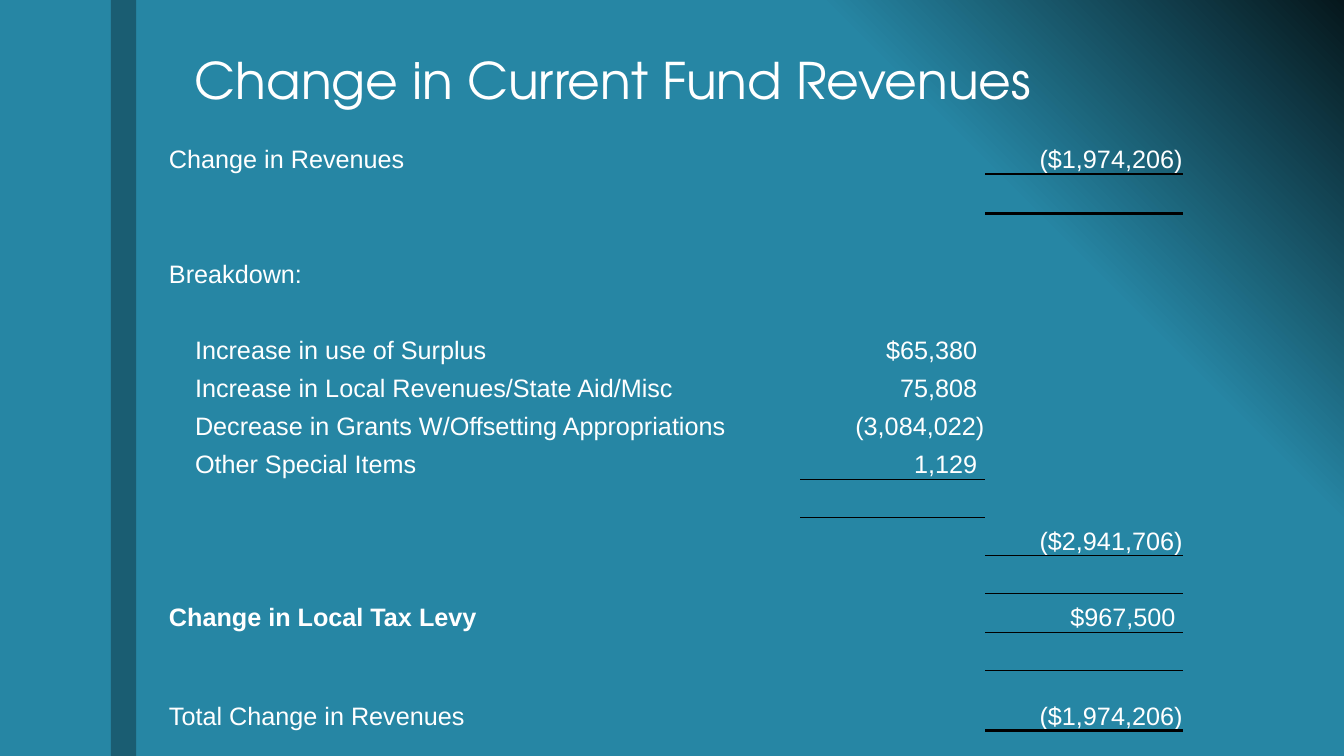
from copy import deepcopy
from dataclasses import dataclass

from lxml.etree import SubElement
from pptx import Presentation
from pptx.dml.color import RGBColor
from pptx.enum.shapes import MSO_SHAPE
from pptx.enum.text import MSO_ANCHOR, MSO_AUTO_SIZE, PP_ALIGN
from pptx.oxml import parse_xml
from pptx.oxml.ns import nsdecls, qn
from pptx.util import Inches, Pt


@dataclass(frozen=True)
class Theme:
    background: tuple = ((0, "06171C"), (0.25, "2686A4"), (0.87, "2686A4"))
    band: str = "134251"
    band_opacity: int = 60
    text: str = "FFFFFF"
    rule: str = "000000"
    title_font: str = "TeX Gyre Adventor"
    body_font: str = "Arial"
    title_size: int = 36
    body_size: int = 18
    thin: float = 0.5
    thick: float = 2


THEME = Theme()
GRID_COLUMNS, GRID_ROWS = 160, 90
TITLE = "Change in Current Fund Revenues"
COLUMN_WIDTHS = [3.1, 3.5, 37.5, 31.2, 22, 23.6]
ROW_HEIGHTS = [4.7, 4.7, 4.45, 4.55, 4.45] + [4.55] * 9 + [7.2]
DETAIL, TOTAL = 4, 5

LABELS = [
    (0, 0, 2, "Change in Revenues", False),
    (3, 0, 2, "Breakdown:", False),
    (5, 1, 2, "Increase in use of Surplus", False),
    (6, 1, 3, "Increase in Local Revenues/State Aid/Misc", False),
    (7, 1, 3, "Decrease in Grants W/Offsetting Appropriations", False),
    (8, 1, 2, "Other Special Items", False),
    (12, 0, 2, "Change in Local Tax Levy", True),
    (14, 0, 2, "Total Change in Revenues", False),
]
AMOUNTS = [
    (0, TOTAL, "($1,974,206)", THEME.thick),
    (5, DETAIL, "$65,380", None),
    (6, DETAIL, "75,808", None),
    (7, DETAIL, "(3,084,022)", None),
    (8, DETAIL, "1,129", THEME.thin),
    (10, TOTAL, "($2,941,706)", THEME.thin),
    (12, TOTAL, "$967,500", THEME.thin),
    (14, TOTAL, "($1,974,206)", THEME.thick),
]


def apply(target, values):
    for name, value in values.items():
        setattr(target, name, value)


class SlideBuilder:
    def __init__(self, presentation, theme):
        self.theme = theme
        self.column = presentation.slide_width / GRID_COLUMNS
        self.row = presentation.slide_height / GRID_ROWS
        self.slide = presentation.slides.add_slide(presentation.slide_layouts[5])

    def box(self, left, top, width, height):
        return {
            "left": round(left * self.column),
            "top": round(top * self.row),
            "width": round(width * self.column),
            "height": round(height * self.row),
        }

    def style(self, paragraph, text, font, size, bold=False):
        run = paragraph.add_run()
        run.text = text
        apply(run.font, {"name": font, "size": Pt(size), "bold": bold})
        run.font.color.rgb = RGBColor.from_string(self.theme.text)

    def background(self):
        fill = self.slide.background.fill
        fill.gradient()
        fill.gradient_angle = 225
        stop_list = self.slide.background._cSld.find(".//" + qn("a:gsLst"))
        stop_list.append(deepcopy(stop_list[-1]))
        for stop, (position, color) in zip(fill.gradient_stops, self.theme.background):
            stop.position = position
            stop.color.rgb = RGBColor.from_string(color)

    def band(self, *place):
        shape = self.slide.shapes.add_shape(
            MSO_SHAPE.RECTANGLE, *self.box(*place).values()
        )
        shape.shadow.inherit = False
        shape.line.fill.background()
        shape.fill.solid()
        shape.fill.fore_color.rgb = RGBColor.from_string(self.theme.band)
        color = shape._element.spPr.find(".//" + qn("a:srgbClr"))
        SubElement(color, qn("a:alpha"), val=str(self.theme.band_opacity * 1000))

    def title(self, text, *place):
        title = self.slide.shapes.title
        apply(title, self.box(*place))
        apply(title.text_frame, {
            "vertical_anchor": MSO_ANCHOR.BOTTOM,
            "word_wrap": True,
            "auto_size": MSO_AUTO_SIZE.NONE,
        })
        paragraph = title.text_frame.paragraphs[0]
        apply(paragraph, {"alignment": PP_ALIGN.LEFT, "line_spacing": 0.9})
        self.style(paragraph, text, self.theme.title_font, self.theme.title_size)

    def table(self, left, top, widths, heights):
        place = self.box(left, top, sum(widths), sum(heights))
        frame = self.slide.shapes.add_table(len(heights), len(widths), *place.values())
        table = frame.table
        apply(table, {"first_row": False, "horz_banding": False})
        style_id = table._tbl.tblPr.find(qn("a:tableStyleId"))
        style_id.text = "{2D5ABB26-0587-4C30-8999-92F81FD0307C}"
        for column, width in zip(table.columns, widths):
            column.width = round(width * self.column)
        for row, height in zip(table.rows, heights):
            row.height = round(height * self.row)
        for cell in table.iter_cells():
            cell.fill.background()
            apply(cell, {
                "vertical_anchor": MSO_ANCHOR.BOTTOM,
                "margin_left": Inches(0.01),
                "margin_right": Inches(0.01),
                "margin_top": Inches(0.01),
                "margin_bottom": 0,
            })
        return table

    def label(self, table, row, first, last, text, bold):
        cell = table.cell(row, first)
        cell.merge(table.cell(row, last))
        paragraph = cell.text_frame.paragraphs[0]
        self.style(paragraph, text, self.theme.body_font, self.theme.body_size, bold)

    def amount(self, table, row, column, text, rule):
        cell = table.cell(row, column)
        if not text.endswith(")"):
            cell.margin_right = Inches(0.08)
        paragraph = cell.text_frame.paragraphs[0]
        paragraph.alignment = PP_ALIGN.RIGHT
        self.style(paragraph, text, self.theme.body_font, self.theme.body_size)
        if rule:
            self.border(cell, "lnB", rule)
            if row + 1 < len(table.rows):
                self.border(table.cell(row + 1, column), "lnT", rule)

    def border(self, cell, side, width):
        line = parse_xml(
            f'<a:{side} {nsdecls("a")} w="{Pt(width)}"><a:solidFill>'
            f'<a:srgbClr val="{self.theme.rule}"/></a:solidFill></a:{side}>'
        )
        cell._tc.get_or_add_tcPr().insert(0, line)


def main():
    presentation = Presentation()
    apply(presentation, {"slide_width": Inches(13.33), "slide_height": Inches(7.5)})
    builder = SlideBuilder(presentation, THEME)
    builder.background()
    builder.band(13.2, 0, 3, GRID_ROWS)
    builder.title(TITLE, 22, 2, 109, 11.8)
    table = builder.table(20, 16, COLUMN_WIDTHS, ROW_HEIGHTS)
    for label in LABELS:
        builder.label(table, *label)
    for amount in AMOUNTS:
        builder.amount(table, *amount)
    presentation.save("out.pptx")


if __name__ == "__main__":
    main()
